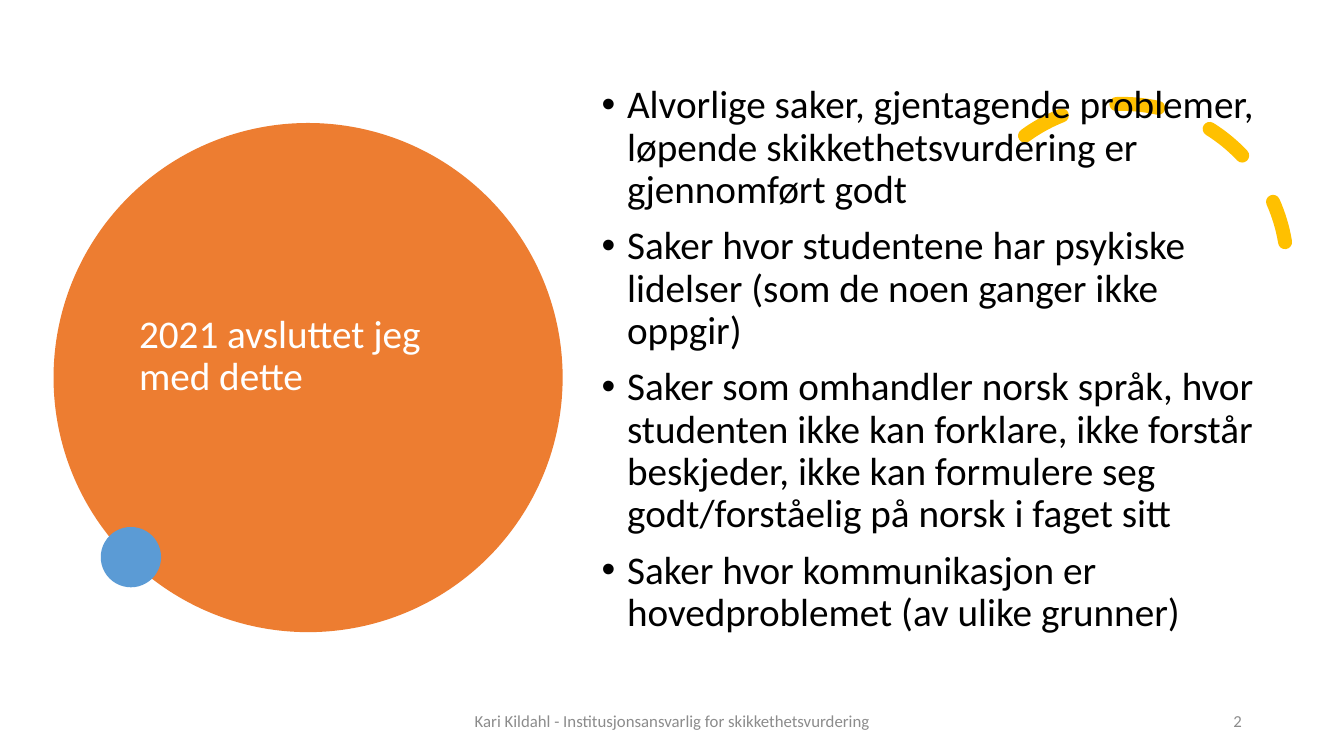
import pptx
import pptx.util
import pptx.dml.color
import pptx.enum.dml
import pptx.enum.shapes
import pptx.enum.text
import pptx.oxml.ns
import lxml.etree

Cm = pptx.util.Cm
Pt = pptx.util.Pt
Kind = pptx.enum.shapes.MSO_SHAPE
Side = pptx.enum.text.PP_ALIGN
Hold = pptx.enum.text.MSO_ANCHOR
qn = pptx.oxml.ns.qn

HUES = {
    "disc": "ED7D31",
    "dot": "5B9BD5",
    "arc": "FFC000",
    "title": "FFFFFF",
    "body": "000000",
    "foot": "8C8C8C",
}
FACE = "Calibri"
POINTS = [
    "Alvorlige saker, gjentagende problemer, løpende skikkethetsvurdering er gjennomført godt",
    "Saker hvor studentene har psykiske lidelser (som de noen ganger ikke oppgir)",
    "Saker som omhandler norsk språk, hvor studenten ikke kan forklare, ikke forstår beskjeder, "
    "ikke kan formulere seg godt/forståelig på norsk i faget sitt",
    "Saker hvor kommunikasjon er hovedproblemet (av ulike grunner)",
]


def apply(item, form):
    for name, value in form.items():
        setattr(item, name, value)


class Page:
    def __init__(self, slide):
        self.slide = slide
        self.tree = slide.shapes

    def hue(self, name):
        return pptx.dml.color.RGBColor.from_string(HUES[name])

    def label(self, box, lines, hue, size, frame, para):
        text = box.text_frame
        apply(text, {"word_wrap": True, "auto_size": pptx.enum.text.MSO_AUTO_SIZE.NONE, **frame})
        text.text = "\n".join(lines)
        for part in text.paragraphs:
            apply(part, para)
            font = part.runs[0].font
            apply(font, {"name": FACE, "size": Pt(size)})
            font.color.rgb = self.hue(hue)

    def place(self, box, area):
        names = ("left", "top", "width", "height")
        apply(box, dict(zip(names, map(Cm, area))))
        self.tree._spTree.append(box._element)

    def disc(self, left, top, size, hue):
        disc = self.tree.add_shape(Kind.OVAL, Cm(left), Cm(top), Cm(size), Cm(size))
        disc.shadow.inherit = False
        disc.fill.solid()
        disc.fill.fore_color.rgb = self.hue(hue)
        disc.line.fill.background()

    def arc(self, left, top, size, turn, ends):
        arc = self.tree.add_shape(Kind.ARC, Cm(left), Cm(top), Cm(size), Cm(size))
        arc.shadow.inherit = False
        arc.rotation = turn
        for spot, end in enumerate(ends):
            arc.adjustments[spot] = end
        arc.fill.background()
        arc.line.color.rgb = self.hue("arc")
        apply(arc.line, {"width": Pt(10), "dash_style": pptx.enum.dml.MSO_LINE.DASH})
        arc.line._get_or_add_ln().set("cap", "rnd")

    def title(self, text, area):
        box = self.tree.title
        self.place(box, area)
        frame = {"vertical_anchor": Hold.MIDDLE, "margin_bottom": Cm(1.22)}
        self.label(box, [text], "title", 28, frame, {"alignment": Side.LEFT, "line_spacing": 0.9})

    def list(self, lines, area):
        box = self.slide.placeholders[1]
        self.place(box, area)
        para = {"line_spacing": 0.9, "space_before": Pt(10)}
        self.label(box, lines, "body", 28, {"vertical_anchor": Hold.TOP}, para)
        for part in box.text_frame.paragraphs:
            prop = part._p.get_or_add_pPr()
            prop.set("marL", str(Cm(0.64)))
            prop.set("indent", str(Cm(-0.64)))
            lxml.etree.SubElement(prop, qn("a:buFont")).set("typeface", "Arial")
            lxml.etree.SubElement(prop, qn("a:buChar")).set("char", "•")

    def foot(self, text, left, width, side):
        box = self.tree.add_textbox(Cm(left), Cm(17.65), Cm(width), Cm(1.02))
        para = {"alignment": side, "space_after": Pt(6)}
        self.label(box, [text], "foot", 12, {"vertical_anchor": Hold.MIDDLE}, para)


def main():
    deck = pptx.Presentation()
    apply(deck, {"slide_width": Cm(33.87), "slide_height": Cm(19.05)})
    page = Page(deck.slides.add_slide(deck.slide_layouts[1]))
    page.disc(1.35, 3.1, 12.83, "disc")
    page.title("2021 avsluttet jeg med dette", (3.25, 3.89, 8.99, 11.3))
    page.arc(24.13, 2.62, 8.31, 330.2, (158.17, 17.81))
    page.disc(2.54, 13.28, 1.52, "dot")
    page.list(POINTS, (14.91, 2.01, 17.22, 15.27))
    page.foot("Kari Kildahl - Institusjonsansvarlig for skikkethetsvurdering", 11.23, 11.43, Side.CENTER)
    page.foot("2", 23.93, 7.62, Side.RIGHT)
    deck.save("out.pptx")


if __name__ == "__main__":
    main()
